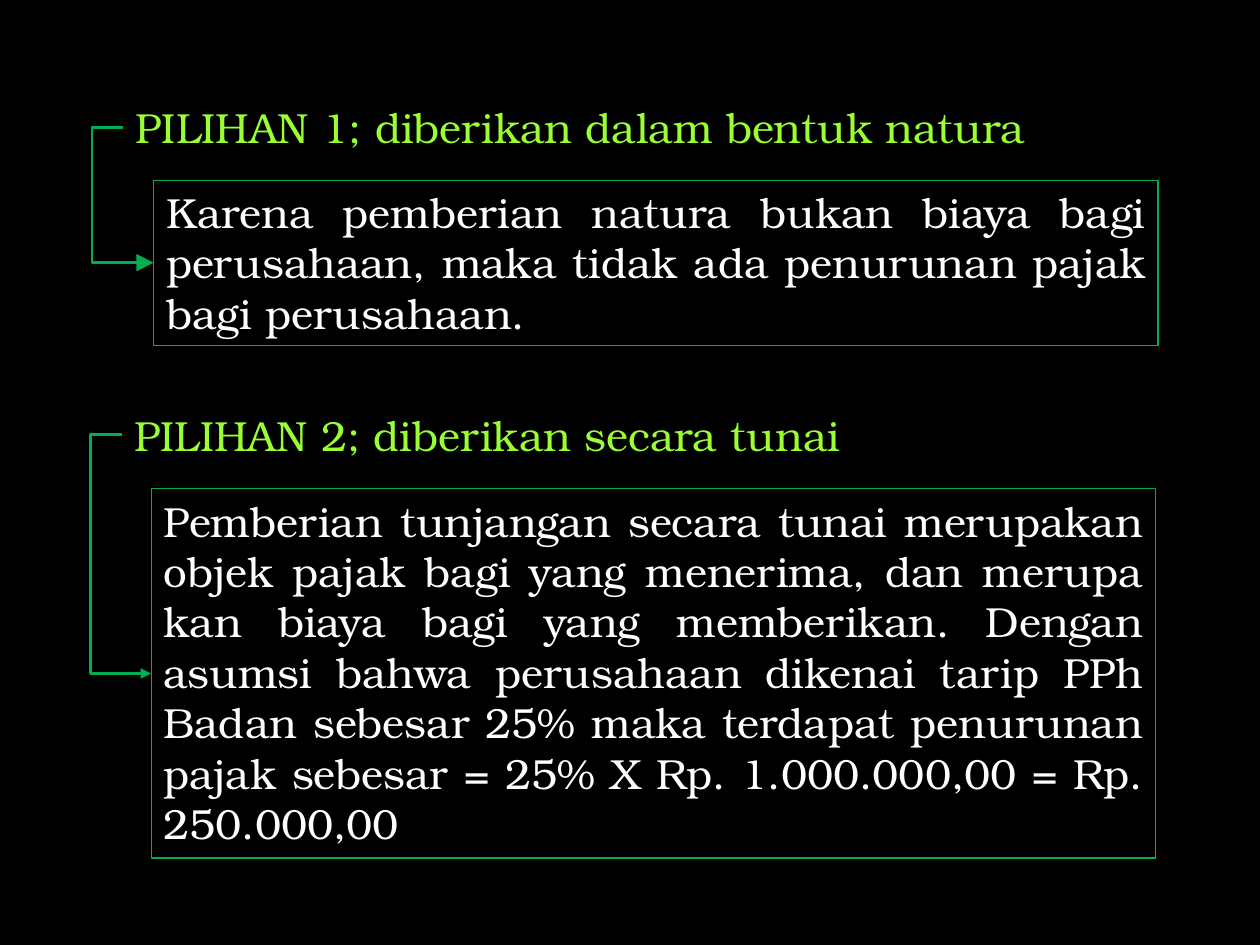
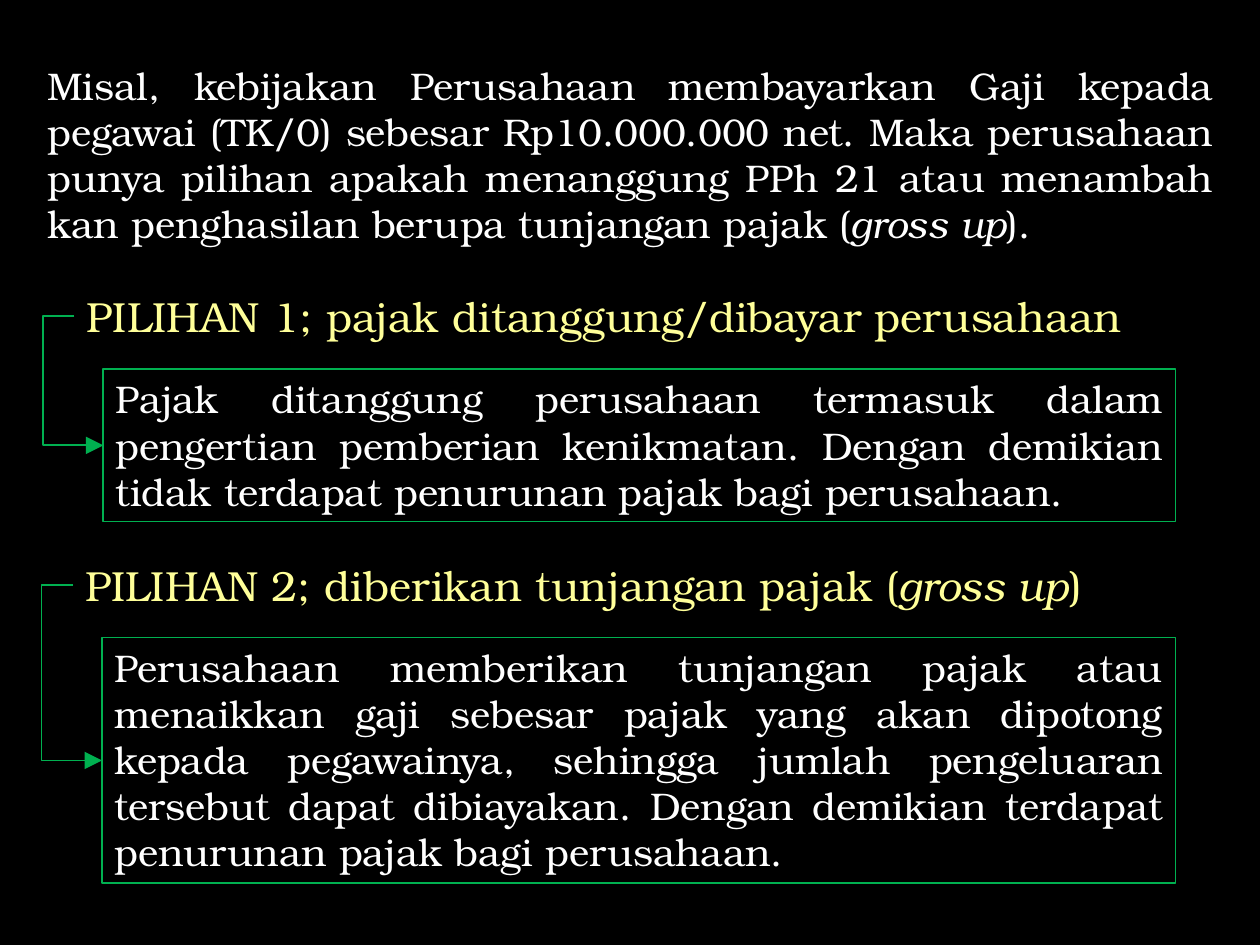
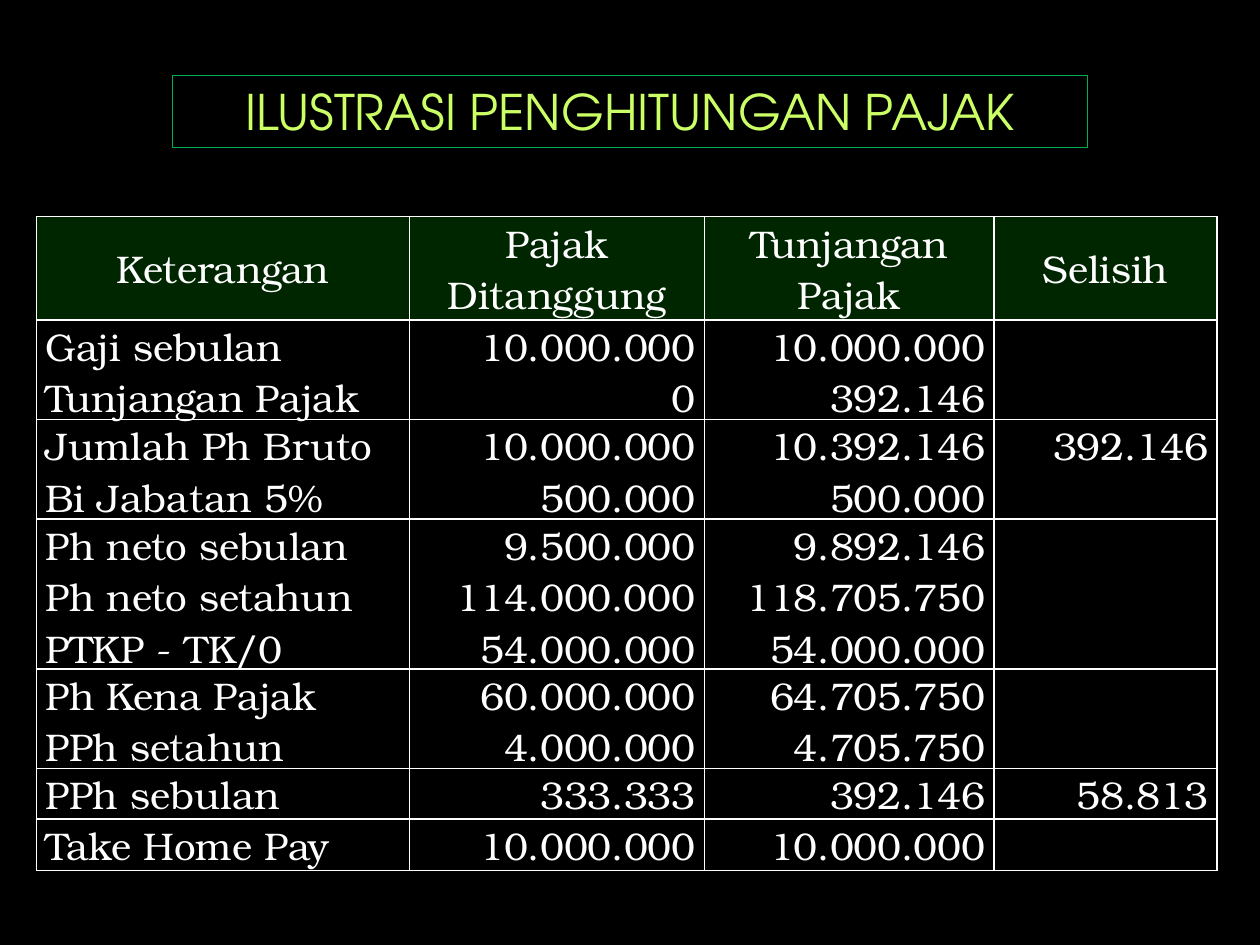
import pptx
import pptx.dml.color
import pptx.enum.shapes
import pptx.enum.text
import pptx.oxml
import pptx.oxml.ns
import pptx.util

Inches = pptx.util.Inches
RGBColor = pptx.dml.color.RGBColor
Align = pptx.enum.text.PP_ALIGN
Anchor = pptx.enum.text.MSO_ANCHOR
RECTANGLE = pptx.enum.shapes.MSO_SHAPE.RECTANGLE

BLACK = RGBColor(0x00, 0x00, 0x00)
WHITE = RGBColor(0xFF, 0xFF, 0xFF)
GREEN = RGBColor(0x00, 0xB0, 0x50)
DARK_GREEN = RGBColor(0x00, 0x26, 0x00)
LIME = RGBColor(0x99, 0xFF, 0x33)
PALE_LIME = RGBColor(0xCC, 0xFF, 0x66)
YELLOW = RGBColor(0xFF, 0xFF, 0x99)
BODY_FONT = "TeX Gyre Bonum"
TITLE_FONT = "TeX Gyre Adventor"

# An option is a heading, a framed explanation and an arrow joining their left sides
HEADING_HEIGHT = 0.5
ARROW_REACH = 0.25


def write(frame, text, size=22, color=WHITE, font=BODY_FONT, align=Align.JUSTIFY):
    """Fill a text frame; newlines split paragraphs, asterisks enclose italics."""
    frame.word_wrap = True
    for index, line in enumerate(text.split("\n")):
        paragraph = frame.add_paragraph() if index else frame.paragraphs[0]
        paragraph.alignment = align
        for part, words in enumerate(line.split("*")):
            run = paragraph.add_run()
            run.text = words
            run.font.name = font
            run.font.size = pptx.util.Pt(size)
            run.font.color.rgb = color
            run.font.italic = part % 2 == 1


def add_text(slide, left, top, width, height, text, line_width=None, **text_format):
    """Add a text box, or a framed rectangle when a line width is given."""
    area = [Inches(length) for length in (left, top, width, height)]
    if line_width:
        shape = slide.shapes.add_shape(RECTANGLE, *area)
        shape.shadow.inherit = False
        shape.fill.background()
        shape.line.color.rgb = GREEN
        shape.line.width = pptx.util.Pt(line_width)
    else:
        shape = slide.shapes.add_textbox(*area)
    shape.text_frame.vertical_anchor = Anchor.TOP
    shape.text_frame.auto_size = pptx.enum.text.MSO_AUTO_SIZE.SHAPE_TO_FIT_TEXT
    write(shape.text_frame, text, **text_format)
    return shape


presentation = pptx.Presentation()
presentation.slide_width = Inches(10)
presentation.slide_height = Inches(7.5)
background = presentation.slide_master.background.fill
background.solid()
background.fore_color.rgb = BLACK
blank = presentation.slide_layouts[6]
benefit_slide, salary_slide, table_slide = [presentation.slides.add_slide(blank) for _ in range(3)]

# Slide 2: opening example
add_text(
    salary_slide, 0.28, 0.44, 9.45, 1.58,
    "Misal, kebijakan Perusahaan membayarkan Gaji kepada pegawai (TK/0) sebesar "
    "Rp10.000.000 net. Maka perusahaan punya pilihan apakah menanggung PPh 21 atau "
    "menambah kan penghasilan berupa tunjangan pajak (*gross up*).")

# Slides 1 and 2: the two options on each
# Styles: heading colour, body size, frame width, arrow width
BENEFIT_STYLE = (LIME, 24, 0.75, 1.5)
SALARY_STYLE = (YELLOW, 22, 1, 1)
# Options: slide, style, arrowhead size, heading (left, top, width), box area, texts
options = [
    (benefit_slide, BENEFIT_STYLE, "med", (0.97, 3.2, 7.76), (1.2, 3.88, 7.97, 2.93),
     "PILIHAN 2; diberikan secara tunai",
     "Pemberian tunjangan secara tunai merupakan objek pajak bagi yang menerima, dan "
     "merupa kan biaya bagi yang memberikan. Dengan asumsi bahwa perusahaan dikenai "
     "tarip PPh Badan sebesar 25% maka terdapat penurunan pajak sebesar = 25% X "
     "Rp. 1.000.000,00 = Rp. 250.000,00"),
    (benefit_slide, BENEFIT_STYLE, "lg", (0.98, 0.76, 7.4), (1.22, 1.43, 7.97, 1.31),
     "PILIHAN 1; diberikan dalam bentuk natura",
     "Karena pemberian natura bukan biaya bagi perusahaan, maka tidak ada penurunan "
     "pajak bagi perusahaan."),
    (salary_slide, SALARY_STYLE, "lg", (0.59, 2.26, 8.63), (0.82, 2.93, 8.51, 1.21),
     "PILIHAN 1; pajak ditanggung/dibayar perusahaan",
     "Pajak ditanggung perusahaan termasuk dalam pengertian pemberian kenikmatan. "
     "Dengan demikian tidak terdapat penurunan pajak bagi perusahaan."),
    (salary_slide, SALARY_STYLE, "lg", (0.58, 4.39, 8.72), (0.81, 5.06, 8.52, 1.95),
     "PILIHAN 2; diberikan tunjangan pajak (*gross up*)",
     "Perusahaan memberikan tunjangan pajak atau menaikkan gaji sebesar pajak yang akan "
     "dipotong kepada pegawainya, sehingga jumlah pengeluaran tersebut dapat dibiayakan. "
     "Dengan demikian terdapat penurunan pajak bagi perusahaan."),
]
for slide, style, head_size, heading_area, box_area, title, body in options:
    heading_color, body_size, frame_width, arrow_width = style
    heading = add_text(slide, *heading_area, HEADING_HEIGHT, title,
                       size=24, color=heading_color, align=Align.LEFT)
    box = add_text(slide, *box_area, body, line_width=frame_width, size=body_size)

    # Elbow arrow between the left connection sites
    arrow = slide.shapes.add_connector(pptx.enum.shapes.MSO_CONNECTOR.ELBOW, 0, 0, 0, 0)
    arrow.begin_connect(heading, 1)
    arrow.end_connect(box, 1)
    arrow.line.color.rgb = GREEN
    arrow.line.width = pptx.util.Pt(arrow_width)
    properties = arrow._element.spPr
    bend_share = round(-Inches(ARROW_REACH) / (box.left - heading.left) * 100000)
    bend = pptx.oxml.parse_xml(
        f'<a:gd {pptx.oxml.ns.nsdecls("a")} name="adj1" fmla="val {bend_share}"/>')
    properties.find(pptx.oxml.ns.qn("a:prstGeom")).get_or_add_avLst().append(bend)
    properties.get_or_add_ln().append(pptx.oxml.parse_xml(
        f'<a:tailEnd {pptx.oxml.ns.nsdecls("a")} type="triangle" '
        f'w="{head_size}" len="{head_size}"/>'))
    properties.append(pptx.oxml.parse_xml(f'<a:effectLst {pptx.oxml.ns.nsdecls("a")}/>'))

# Slide 3: title and tax table
add_text(table_slide, 1.37, 0.6, 7.26, 0.57, "ILUSTRASI PENGHITUNGAN PAJAK",
         line_width=0.75, size=28, color=PALE_LIME, font=TITLE_FONT, align=Align.CENTER)

column_widths = [2.96, 2.34, 2.3, 1.77]
row_heights = [0.82, 0.79, 0.79, 1.19, 0.79, 0.4, 0.41]
tax_rows = [
    ("Keterangan", "Pajak Ditanggung", "Tunjangan Pajak", "Selisih"),
    ("Gaji sebulan\nTunjangan Pajak", "10.000.000\n0", "10.000.000\n392.146", ""),
    ("Jumlah Ph Bruto\nBi Jabatan 5%", "10.000.000\n500.000", "10.392.146\n500.000", "392.146"),
    ("Ph neto sebulan\nPh neto setahun\nPTKP - TK/0", "9.500.000\n114.000.000\n54.000.000",
     "9.892.146\n118.705.750\n54.000.000", ""),
    ("Ph Kena Pajak\nPPh setahun", "60.000.000\n4.000.000", "64.705.750\n4.705.750", ""),
    ("PPh sebulan", "333.333", "392.146", "58.813"),
    ("Take Home Pay", "10.000.000", "10.000.000", ""),
]
table = table_slide.shapes.add_table(
    len(row_heights), len(column_widths), Inches(0.29), Inches(1.72),
    Inches(sum(column_widths)), Inches(sum(row_heights))).table
table.first_row = False
table.horz_banding = False
for column, width in zip(table.columns, column_widths):
    column.width = Inches(width)

for row_index, (height, texts) in enumerate(zip(row_heights, tax_rows)):
    table.rows[row_index].height = Inches(height)
    for column_index, text in enumerate(texts):
        cell = table.cell(row_index, column_index)
        cell.margin_left = cell.margin_right = Inches(0.07)
        cell.margin_top = cell.margin_bottom = 0

        # White borders come before the fill in the cell properties
        for side in ("lnL", "lnR", "lnT", "lnB"):
            cell._tc.get_or_add_tcPr().append(pptx.oxml.parse_xml(
                f'<a:{side} {pptx.oxml.ns.nsdecls("a")} w="{pptx.util.Pt(1)}">'
                f'<a:solidFill><a:srgbClr val="{WHITE}"/></a:solidFill></a:{side}>'))
        if row_index == 0:
            cell.fill.solid()
            cell.fill.fore_color.rgb = DARK_GREEN
            cell.vertical_anchor = Anchor.MIDDLE
            align = Align.CENTER
        else:
            cell.fill.background()
            align = Align.RIGHT if column_index else Align.JUSTIFY
        if text:
            write(cell.text_frame, text, align=align)

presentation.save("out.pptx")
